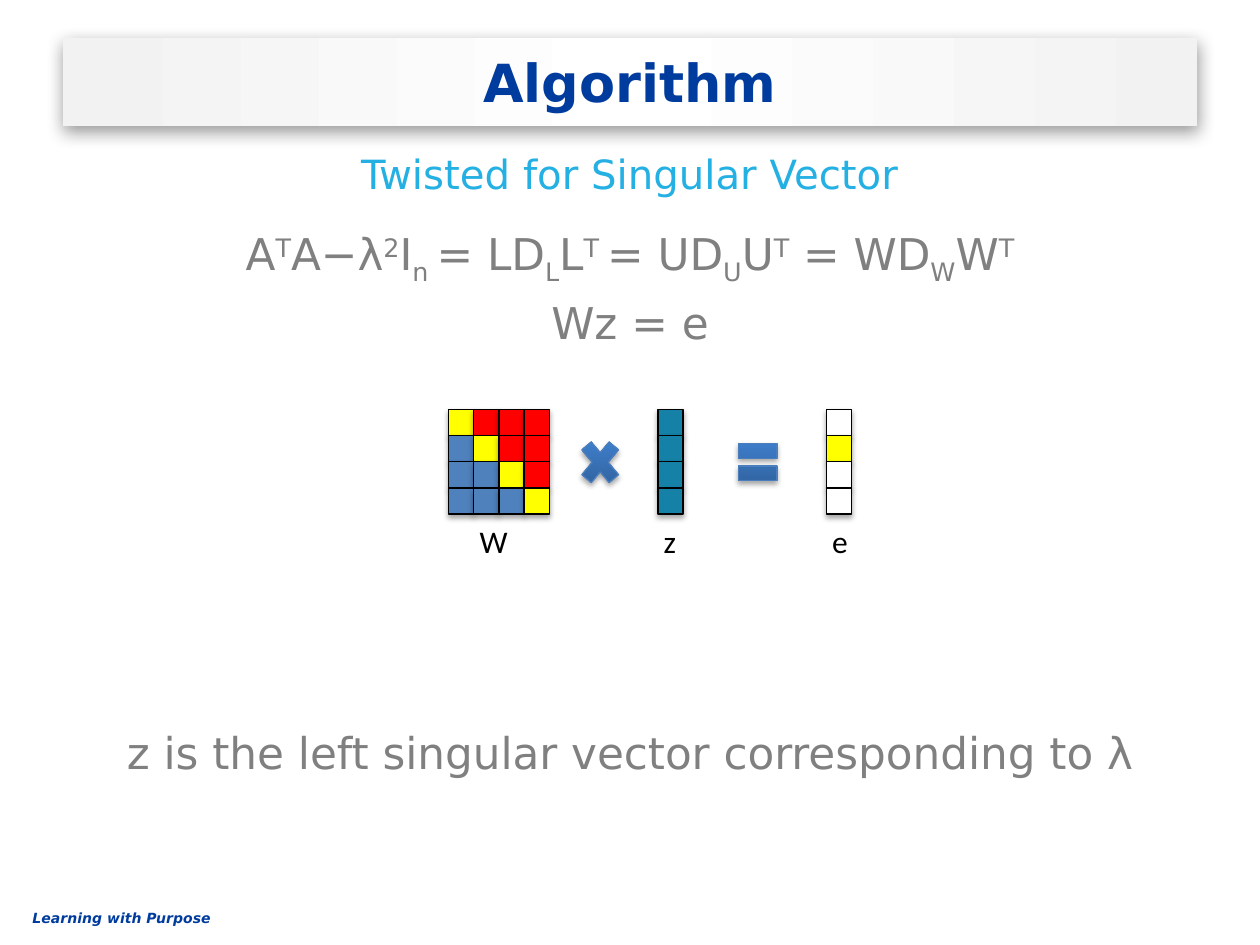
import dataclasses

import lxml.etree
import pptx
import pptx.dml.color
import pptx.enum.shapes
import pptx.enum.text
import pptx.oxml.ns
import pptx.util

Pt = pptx.util.Pt
qn = pptx.oxml.ns.qn
Shape = pptx.enum.shapes.MSO_SHAPE
Align = pptx.enum.text.PP_ALIGN
Anchor = pptx.enum.text.MSO_ANCHOR
SUPER, SUB = 30, -25


@dataclasses.dataclass(frozen=True)
class Theme:
    font: str = "DejaVu Sans"
    label_font: str = "Calibri"
    navy: str = "003C9E"
    cyan: str = "24B0E3"
    grey: str = "808080"
    black: str = "000000"
    white: str = "FFFFFF"
    yellow: str = "FFFF00"
    red: str = "FF0000"
    blue: str = "4F81BD"
    teal: str = "1581A7"
    operator_line: str = "4B7EBC"
    banner_stops: tuple = ((2, "F2F2F2"), (50, "FFFFFF"), (100, "F2F2F2"))
    operator_stops: tuple = ((0, "2F5F99"), (80, "3D7CC7"), (100, "3A7CCB"))
    title_size: int = 30
    subtitle_size: int = 23
    body_size: int = 25
    label_size: int = 18
    footer_size: int = 8


class SlideBuilder:
    def __init__(self, slide, theme):
        self.slide = slide
        self.theme = theme

    def place(self, shape, left, top, width, height):
        shape.left, shape.top = Pt(left), Pt(top)
        shape.width, shape.height = Pt(width), Pt(height)

    def style(self, para, size, color, font=None, bold=False, italic=False):
        for span in para.runs:
            span.font.name = font or self.theme.font
            span.font.size = Pt(size)
            span.font.bold, span.font.italic = bold, italic
            span.font.color.rgb = pptx.dml.color.RGBColor.from_string(color)

    def color_node(self, parent, color):
        return lxml.etree.SubElement(parent, qn("a:srgbClr"), val=color)

    def gradient(self, shape, stops, angle):
        shape.fill.gradient()
        shape.fill.gradient_angle = angle
        stop_list = shape.element.spPr.find(".//" + qn("a:gsLst"))
        for stop in list(stop_list):
            stop_list.remove(stop)
        for position, color in stops:
            stop = lxml.etree.SubElement(stop_list, qn("a:gs"), pos=str(position * 1000))
            self.color_node(stop, color)

    def shadow(self, shape, alpha=35, blur=3.1, distance=1.8):
        shape.shadow.inherit = False
        effects = shape.element.spPr.find(qn("a:effectLst"))
        outer = lxml.etree.SubElement(
            effects, qn("a:outerShdw"), blurRad=str(int(Pt(blur))),
            dist=str(int(Pt(distance))), dir="5400000", rotWithShape="0")
        color = self.color_node(outer, self.theme.black)
        lxml.etree.SubElement(color, qn("a:alpha"), val=str(alpha * 1000))

    def title(self, text, *bounds):
        box = self.slide.shapes.title
        self.place(box, *bounds)
        self.gradient(box, self.theme.banner_stops, 0)
        self.shadow(box, 40, 10, 3)
        box.text_frame.text = text
        box.text_frame.vertical_anchor = Anchor.MIDDLE
        para = box.text_frame.paragraphs[0]
        para.alignment = Align.CENTER
        self.style(para, self.theme.title_size, self.theme.navy, bold=True)

    def body(self, index, lines, size, color, anchor, *bounds):
        """Each line is (space before, [(text, baseline), ...])."""
        box = self.slide.placeholders[index]
        self.place(box, *bounds)
        frame = box.text_frame
        frame.auto_size = pptx.enum.text.MSO_AUTO_SIZE.NONE
        frame.vertical_anchor = anchor
        for number, (space, pieces) in enumerate(lines):
            para = frame.add_paragraph() if number else frame.paragraphs[0]
            para.alignment = Align.CENTER
            para.space_before = Pt(space)
            properties = para._p.get_or_add_pPr()
            properties.set("marL", "0")
            properties.set("indent", "0")
            lxml.etree.SubElement(properties, qn("a:buNone"))
            for text, baseline in pieces:
                span = para.add_run()
                span.text = text
                if baseline:
                    span.font._element.set("baseline", str(baseline * 1000))
            self.style(para, size, color)

    def text(self, shapes, text, bounds, size, color, font=None, wrap=False, **emphasis):
        box = shapes.add_textbox(*map(Pt, bounds))
        box.text_frame.word_wrap = wrap
        box.text_frame.text = text
        self.style(box.text_frame.paragraphs[0], size, color, font, **emphasis)

    def shape(self, shapes, kind, bounds, line):
        shape = shapes.add_shape(kind, *map(Pt, bounds))
        shape.line.color.rgb = pptx.dml.color.RGBColor.from_string(line)
        shape.line.width = Pt(0.75)
        self.shadow(shape)
        return shape

    def matrix(self, shapes, left, top, rows, label, label_left):
        width, height = 14.4, 14.95
        for row, colors in enumerate(rows):
            for column, color in enumerate(colors):
                bounds = (left + column * width, top + row * height, width, height)
                cell = self.shape(shapes, Shape.RECTANGLE, bounds, self.theme.black)
                cell.fill.solid()
                cell.fill.fore_color.rgb = pptx.dml.color.RGBColor.from_string(color)
        self.text(shapes, label, (label_left, 294.5, 28, 29), self.theme.label_size,
                  self.theme.black, self.theme.label_font)

    def operator(self, kind, left):
        sign = self.shape(self.slide.shapes, kind, (left, 246.2, 30, 36),
                          self.theme.operator_line)
        self.gradient(sign, self.theme.operator_stops, 90)


def main():
    deck = pptx.Presentation()
    deck.slide_width, deck.slide_height = Pt(720), Pt(540)
    theme = Theme()
    page = SlideBuilder(deck.slides.add_slide(deck.slide_layouts[3]), theme)
    shapes = page.slide.shapes

    # Heading and footer
    page.title("Algorithm", 36, 21.6, 648, 50.4)
    page.body(2, [(0, [("Twisted for Singular Vector", 0)])], theme.subtitle_size,
              theme.cyan, Anchor.MIDDLE, 36, 78, 648, 42)
    page.text(shapes, "Learning with Purpose", (11.5, 516, 266, 17), theme.footer_size,
              theme.navy, wrap=True, bold=True, italic=True)

    # Factorisation, with the conclusion below the diagram
    formula = [
        ("A", 0), ("T", SUPER), ("A−λ", 0), ("2", SUPER), ("I", 0), ("n ", SUB),
        ("= LD", 0), ("L", SUB), ("L", 0), ("T ", SUPER),
        ("= UD", 0), ("U", SUB), ("U", 0), ("T", SUPER),
        (" = WD", 0), ("W", SUB), ("W", 0), ("T", SUPER),
    ]
    conclusion = "z is the left singular vector corresponding to λ"
    page.body(1, [(0, formula), (5, [("Wz = e", 0)]), (216, [(conclusion, 0)])],
              theme.body_size, theme.grey, Anchor.TOP, 36, 126, 648, 90)

    # Diagram: W × z = e
    order, top = 4, 234
    twisted = [[theme.blue] * row + [theme.yellow] + [theme.red] * (order - 1 - row)
               for row in range(order)]
    unit = [[theme.yellow if row == 1 else theme.white] for row in range(order)]
    page.matrix(shapes.add_group_shape().shapes, 256.3, top, twisted, "W", 267)
    page.matrix(shapes, 376, top, [[theme.teal]] * order, "z", 372.2)
    page.matrix(shapes, 472.2, top, unit, "e", 468.5)
    page.operator(Shape.MATH_MULTIPLY, 328)
    page.operator(Shape.MATH_EQUAL, 418)

    deck.save("out.pptx")


if __name__ == "__main__":
    main()
